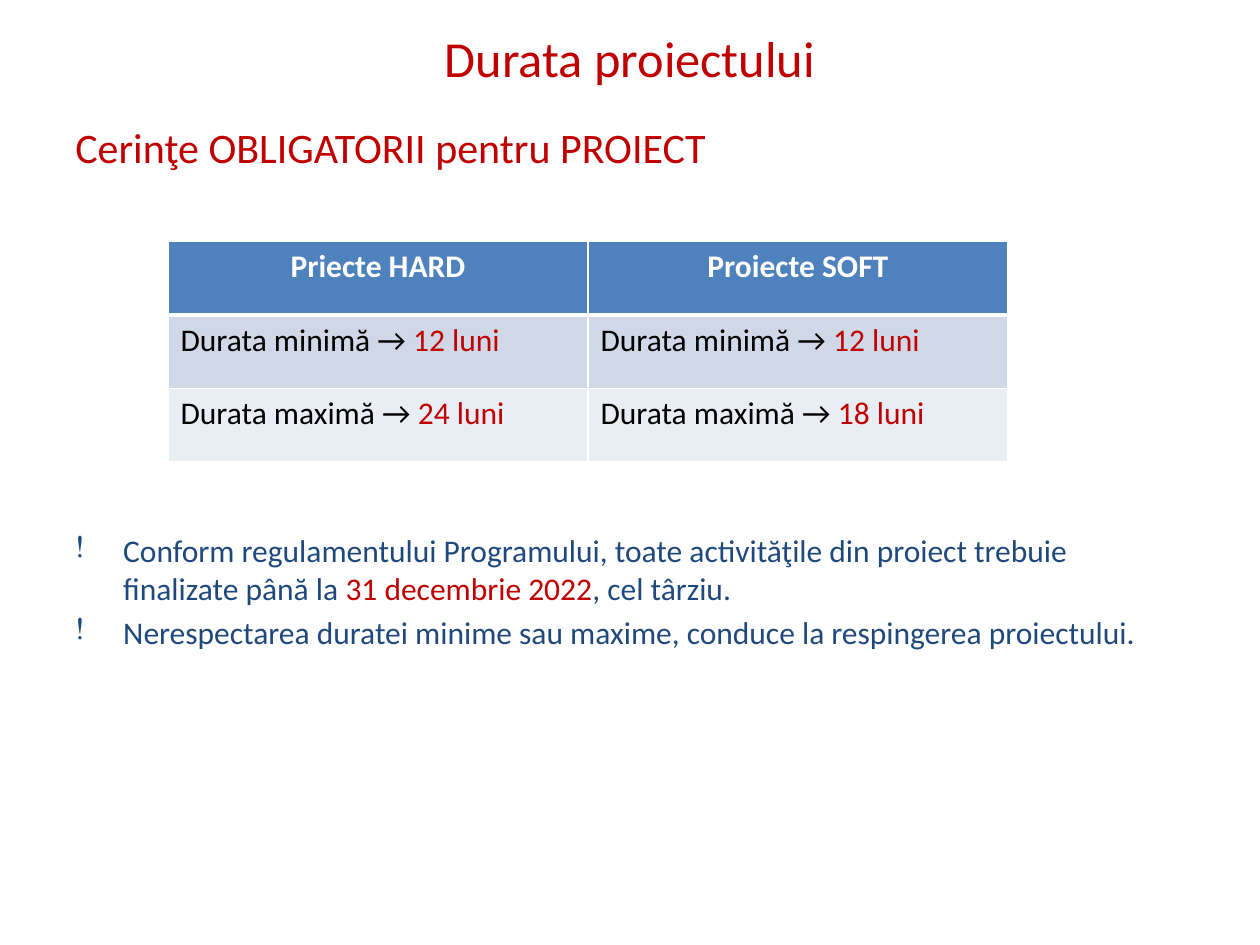
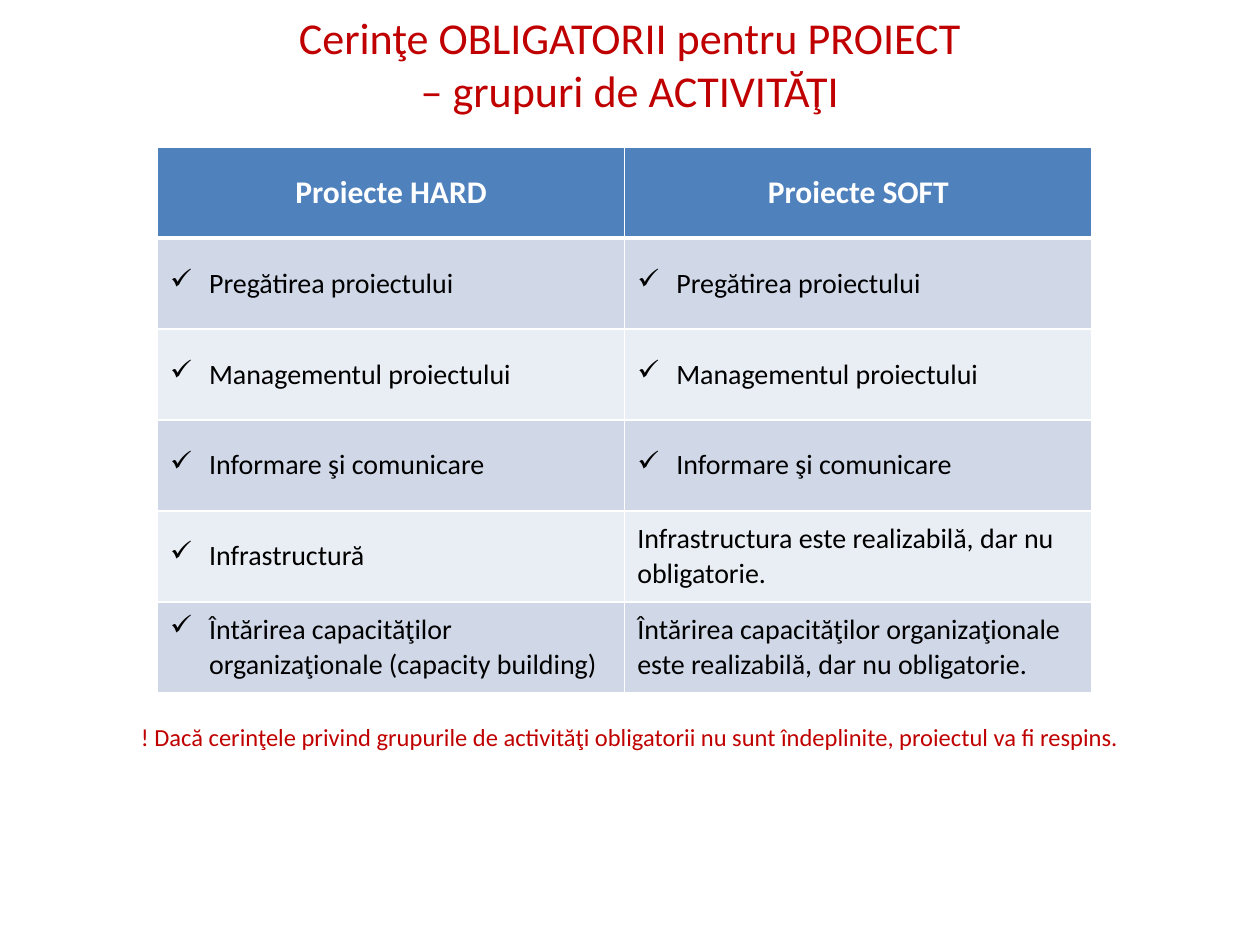
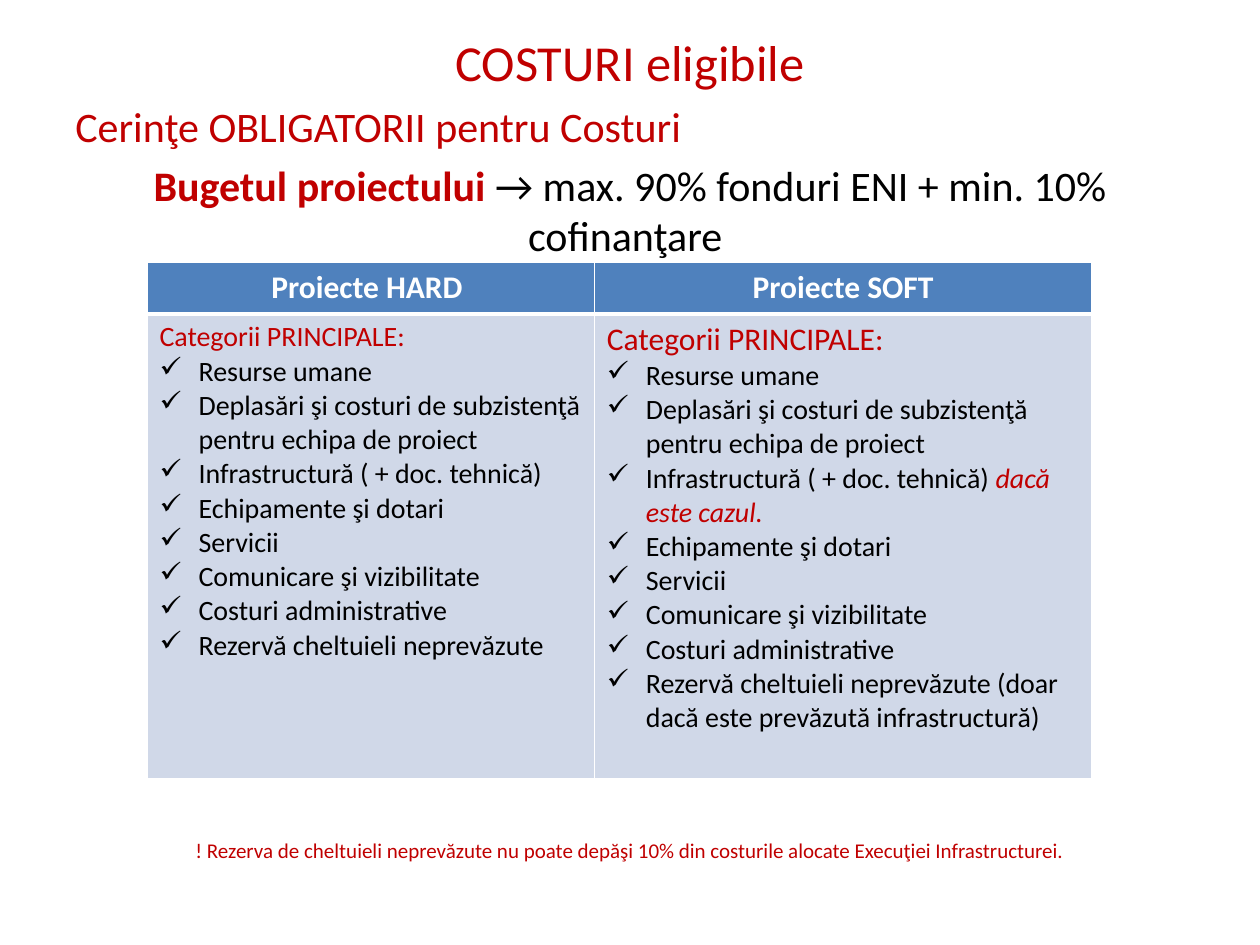
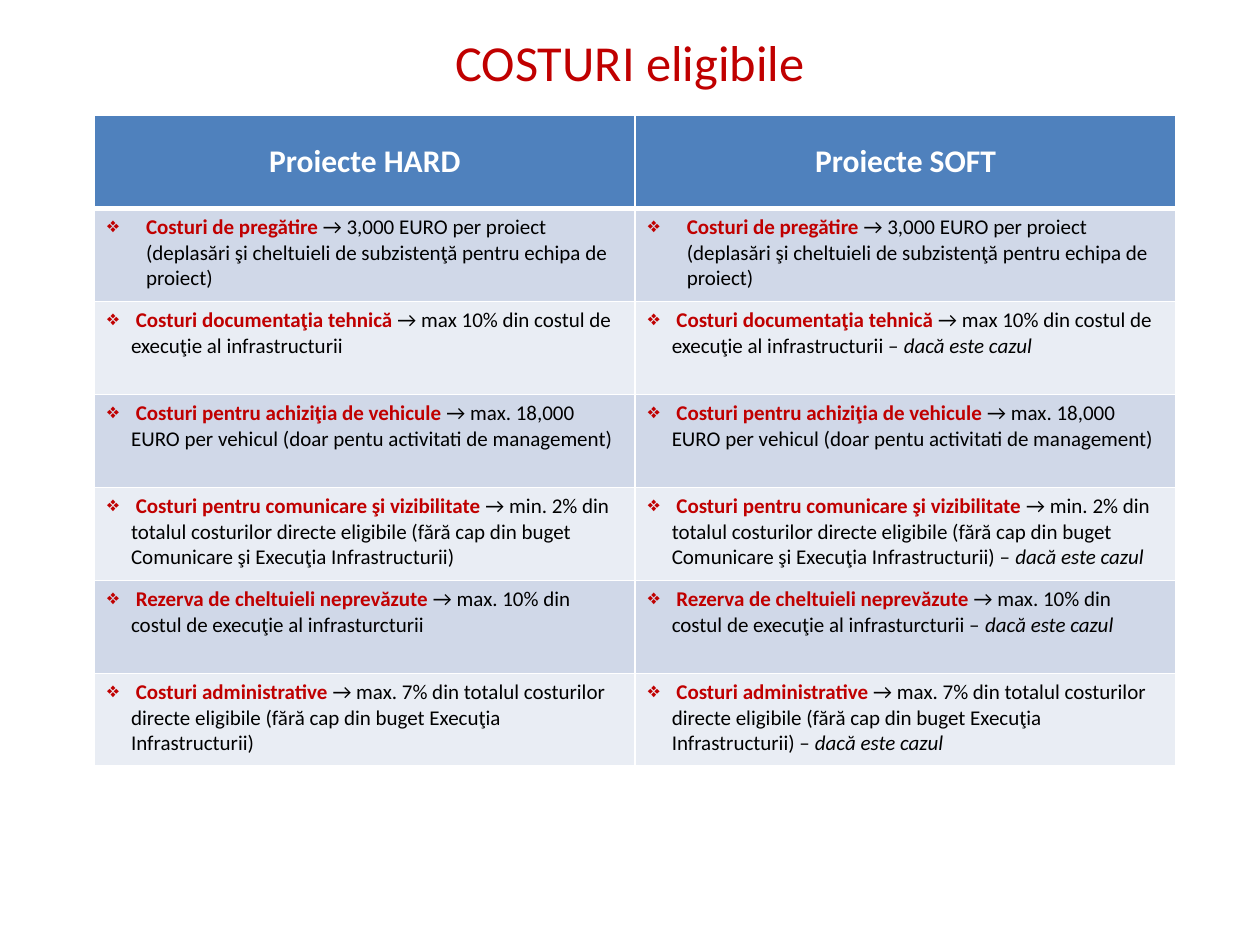
from dataclasses import dataclass
from typing import Optional

from lxml import etree
from pptx import Presentation
from pptx.dml.color import RGBColor
from pptx.enum.text import MSO_ANCHOR, PP_ALIGN
from pptx.oxml.ns import qn
from pptx.util import Emu, Inches, Pt

LEFT, CENTER, JUSTIFY = PP_ALIGN.LEFT, PP_ALIGN.CENTER, PP_ALIGN.JUSTIFY
TOP, MIDDLE = MSO_ANCHOR.TOP, MSO_ANCHOR.MIDDLE

COLOURS = {
    "accent": "C00000",
    "note": "1F497D",
    "text": "000000",
    "white": "FFFFFF",
    "header": "4F81BD",
    "odd": "D0D8E8",
    "even": "E9EDF4",
}
FONT = "Calibri"
CHECK, DIAMOND = "✓", "❖"
WIDE_INDENT, NARROW_INDENT = 0.31, 0.19

# The page is a grid of 120 columns by 90 rows
SLIDE_WIDTH, SLIDE_HEIGHT = Inches(10), Inches(7.5)
COLUMN, ROW = SLIDE_WIDTH / 120, SLIDE_HEIGHT / 90
MARGIN, CONTENT_WIDTH = 6, 108


@dataclass(frozen=True)
class Span:
    text: str
    colour: str = "text"
    bold: bool = False
    italic: bool = False


@dataclass(frozen=True)
class Para:
    spans: tuple[Span, ...]
    size: float
    align: PP_ALIGN = LEFT
    bullet: Optional[str] = None
    indent: float = WIDE_INDENT


@dataclass(frozen=True)
class Area:
    left: float
    top: float
    width: float
    height: float

    def lengths(self) -> tuple[Emu, ...]:
        units = (COLUMN, ROW, COLUMN, ROW)
        sizes = (self.left, self.top, self.width, self.height)
        return tuple(Emu(round(size * unit)) for size, unit in zip(sizes, units))


Cell = list[Para]


@dataclass(frozen=True)
class Grid:
    area: Area
    headers: tuple[str, str]
    rows: list[tuple[Cell, Cell]]
    widths: Optional[tuple[float, float]] = None
    heights: Optional[tuple[float, ...]] = None
    header_anchor: MSO_ANCHOR = MIDDLE
    body_anchor: MSO_ANCHOR = TOP


def rgb(name: str) -> RGBColor:
    return RGBColor.from_string(COLOURS[name])


# Text
def add_bullet(paragraph, sign: str, indent: float) -> None:
    properties = paragraph._p.get_or_add_pPr()
    properties.set("marL", str(Inches(indent)))
    properties.set("indent", str(-Inches(indent)))
    etree.SubElement(properties, qn("a:buChar"), char=sign)


def write_paras(frame, paras: list[Para], spacing: float = 0) -> None:
    for index, para in enumerate(paras):
        paragraph = frame.add_paragraph() if index else frame.paragraphs[0]
        if para.bullet:
            add_bullet(paragraph, para.bullet, para.indent)
        paragraph.alignment = para.align
        paragraph.space_before = Pt(para.size * spacing if index else 0)
        for span in para.spans:
            for number, line in enumerate(span.text.split("\n")):
                if number:
                    paragraph.add_line_break()
                run = paragraph.add_run()
                run.text = line
                font = run.font
                font.name, font.size = FONT, Pt(para.size)
                font.bold, font.italic = span.bold, span.italic
                font.color.rgb = rgb(span.colour)


def add_text(page, area: Area, paras: list[Para], anchor: MSO_ANCHOR = TOP) -> None:
    frame = page.shapes.add_textbox(*area.lengths()).text_frame
    frame.word_wrap = True
    frame.vertical_anchor = anchor
    write_paras(frame, paras, spacing=0.2)


def add_title(page, text: str, top: float, height: float, size: float = 28.8) -> None:
    area = Area(MARGIN, top, CONTENT_WIDTH, height)
    add_text(page, area, [Para((Span(text, "accent"),), size, CENTER)], MIDDLE)


def add_warning(page, text: str, top: float, size: float) -> None:
    area = Area(MARGIN, top, CONTENT_WIDTH, 5)
    add_text(page, area, [Para((Span(text, "accent"),), size, CENTER)])


# Tables
def set_borders(cell, row: int) -> None:
    properties = cell._tc.get_or_add_tcPr()
    top, bottom = (3 if row == 1 else 1), (3 if row == 0 else 1)
    widths = {"a:lnL": 1, "a:lnR": 1, "a:lnT": top, "a:lnB": bottom}
    for position, (side, width) in enumerate(widths.items()):
        line = etree.Element(qn(side), w=str(Pt(width)))
        fill = etree.SubElement(line, qn("a:solidFill"))
        etree.SubElement(fill, qn("a:srgbClr"), val=COLOURS["white"])
        properties.insert(position, line)


def add_grid(page, grid: Grid) -> None:
    headers = tuple(
        [Para((Span(text, "white", bold=True),), 18, CENTER)] for text in grid.headers
    )
    rows = [headers, *grid.rows]
    count = len(rows)
    table = page.shapes.add_table(count, 2, *grid.area.lengths()).table
    widths = grid.widths or (grid.area.width / 2,) * 2
    heights = grid.heights or (grid.area.height / count,) * count
    for column, width in zip(table.columns, widths):
        column.width = Emu(round(width * COLUMN))
    for number, (cells, height) in enumerate(zip(rows, heights)):
        table.rows[number].height = Emu(round(height * ROW))
        band = "odd" if number % 2 else "even"
        for side, paras in enumerate(cells):
            cell = table.cell(number, side)
            cell.fill.solid()
            cell.fill.fore_color.rgb = rgb(band if number else "header")
            cell.vertical_anchor = grid.body_anchor if number else grid.header_anchor
            set_borders(cell, number)
            write_paras(cell.text_frame, paras)


def check(text: str, *extra: Span) -> Para:
    return Para((Span(text), *extra), 16, bullet=CHECK)


# Slide 1: project duration
def build_duration(page) -> None:
    def limit(label: str, months: int) -> Cell:
        return [Para((Span(f"Durata {label} → "), Span(f"{months} luni", "accent")), 18)]

    add_title(page, "Durata proiectului", 2, 7)
    subtitle = Span("Cerinţe OBLIGATORII pentru PROIECT", "accent")
    add_text(page, Area(MARGIN, 11, CONTENT_WIDTH, 6), [Para((subtitle,), 24, JUSTIFY)])
    notes = [
        (
            Span("Conform regulamentului Programului, toate activităţile din proiect "
                 "trebuie finalizate până la ", "note"),
            Span("31 decembrie 2022", "accent"),
            Span(", cel târziu.", "note"),
        ),
        (Span("Nerespectarea duratei minime sau maxime, conduce la respingerea "
              "proiectului.", "note"),),
    ]
    add_text(page, Area(MARGIN, 50, CONTENT_WIDTH, 14),
             [Para(spans, 18, bullet="!", indent=0.38) for spans in notes])
    add_grid(page, Grid(
        Area(16, 23, 80, 21),
        ("Priecte HARD", "Proiecte SOFT"),
        [(limit("minimă", 12), limit("minimă", 12)),
         (limit("maximă", 24), limit("maximă", 18))],
        header_anchor=TOP,
    ))


# Slide 2: compulsory activity groups
def build_activities(page) -> None:
    shared = ["Pregătirea proiectului", "Managementul proiectului",
              "Informare şi comunicare"]
    differing = [
        ("Infrastructură", "Infrastructura este realizabilă, dar nu obligatorie."),
        ("Întărirea capacităţilor organizaţionale (capacity building)",
         "Întărirea capacităţilor organizaţionale este realizabilă, dar nu obligatorie."),
    ]
    rows = [([check(text)], [check(text)]) for text in shared]
    rows += [([check(hard)], [Para((Span(soft),), 16)]) for hard, soft in differing]
    add_title(page, "Cerinţe OBLIGATORII pentru PROIECT\n– grupuri de ACTIVITĂŢI",
              2, 8, 25.2)
    add_warning(page, "! Dacă cerinţele privind grupurile de activităţi obligatorii nu "
                "sunt îndeplinite, proiectul va fi respins.", 68.2, 14)
    add_grid(page, Grid(Area(15, 14, 89, 52), ("Proiecte HARD", "Proiecte SOFT"), rows,
                        body_anchor=MIDDLE))


# Slide 3: main cost categories
def build_categories(page) -> None:
    staff = ["Resurse umane", "Deplasări şi costuri de subzistenţă pentru echipa de proiect"]
    works = "Infrastructură ( + doc. tehnică)"
    services = ["Echipamente şi dotari", "Servicii", "Comunicare şi vizibilitate",
                "Costuri administrative"]
    reserve = "Rezervă cheltuieli neprevăzute"
    heading = (Span("Categorii PRINCIPALE:", "accent"),)
    condition = Span("dacă este cazul.", "accent", italic=True)

    hard = [Para(heading, 16), *map(check, [*staff, works, *services, reserve])]
    soft = [
        Para(heading, 18),
        *map(check, staff),
        check(works + " ", condition),
        *map(check, services),
        check(reserve + " (doar dacă este prevăzută infrastructură)"),
    ]
    add_title(page, "COSTURI eligibile", 3.6, 4.4)
    add_text(page, Area(MARGIN, 9, CONTENT_WIDTH, 16), [
        Para((Span("Cerinţe OBLIGATORII pentru Costuri", "accent"),), 24),
        Para((Span("Bugetul proiectului ", "accent", bold=True),
              Span("→ max. 90% fonduri ENI + min. 10% cofinanţare ")), 24, CENTER),
    ])
    add_warning(page, "! Rezerva de cheltuieli neprevăzute nu poate depăşi 10% din "
                "costurile alocate Execuţiei Infrastructurei.", 79.2, 12)
    add_grid(page, Grid(
        Area(14, 25, 90, 49.2), ("Proiecte HARD ", "Proiecte SOFT"), [(hard, soft)],
        widths=(42.6, 47.4), heights=(4.9, 44.3), header_anchor=TOP,
    ))


# Slide 4: cost limits
@dataclass(frozen=True)
class CostLimit:
    name: str
    rule: str
    conditional: bool = True
    indent: float = NARROW_INDENT

    def cell(self, soft: bool) -> Cell:
        marked = soft and self.conditional
        spans = [Span(self.name + " ", "accent", bold=True),
                 Span(f"→ {self.rule}" + (" – " if marked else ""))]
        if marked:
            spans.append(Span("dacă este cazul", italic=True))
        return [Para(tuple(spans), 12, bullet=DIAMOND, indent=self.indent)]


COST_LIMITS = [
    CostLimit("Costuri de pregătire", "3,000 EURO per proiect (deplasări şi cheltuieli "
              "de subzistenţă pentru echipa de proiect)", False, WIDE_INDENT),
    CostLimit(" Costuri documentaţia tehnică",
              "max 10% din costul de execuţie al infrastructurii"),
    CostLimit(" Costuri pentru achiziţia de vehicule", "max. 18,000 EURO per vehicul "
              "(doar pentu activitati de management)", False),
    CostLimit(" Costuri pentru comunicare şi vizibilitate",
              "min. 2% din totalul costurilor directe eligibile (fără cap din buget "
              "Comunicare şi Execuţia Infrastructurii)"),
    CostLimit(" Rezerva de cheltuieli neprevăzute",
              "max. 10% din costul de execuţie al infrasturcturii"),
    CostLimit(" Costuri administrative", "max. 7% din totalul costurilor directe "
              "eligibile (fără cap din buget Execuţia Infrastructurii)"),
]


def build_limits(page) -> None:
    add_title(page, "COSTURI eligibile", 3.6, 4.4)
    rows = [(limit.cell(False), limit.cell(True)) for limit in COST_LIMITS]
    add_grid(page, Grid(Area(9, 11, 103, 62), ("Proiecte HARD", "Proiecte SOFT"), rows))


def main() -> None:
    deck = Presentation()
    deck.slide_width, deck.slide_height = SLIDE_WIDTH, SLIDE_HEIGHT
    blank = deck.slide_layouts[6]
    for build in (build_duration, build_activities, build_categories, build_limits):
        build(deck.slides.add_slide(blank))
    deck.save("out.pptx")


if __name__ == "__main__":
    main()
